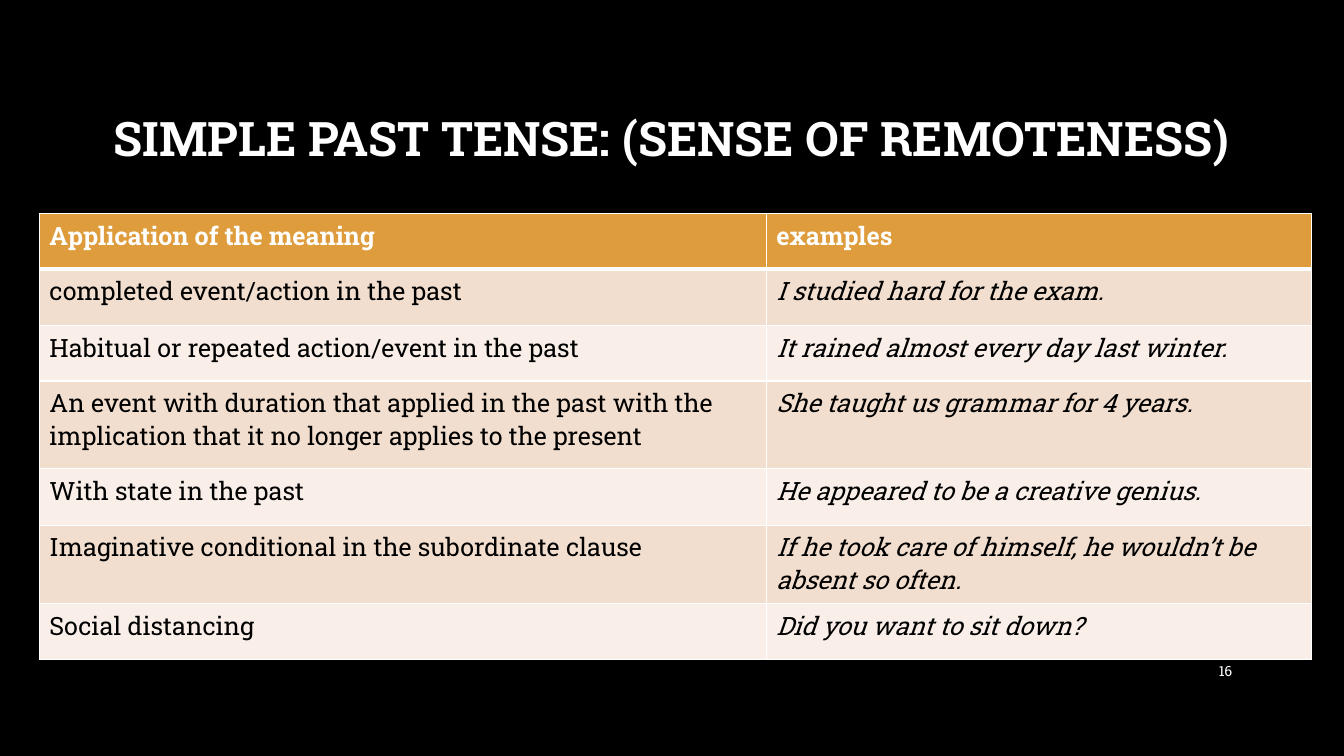
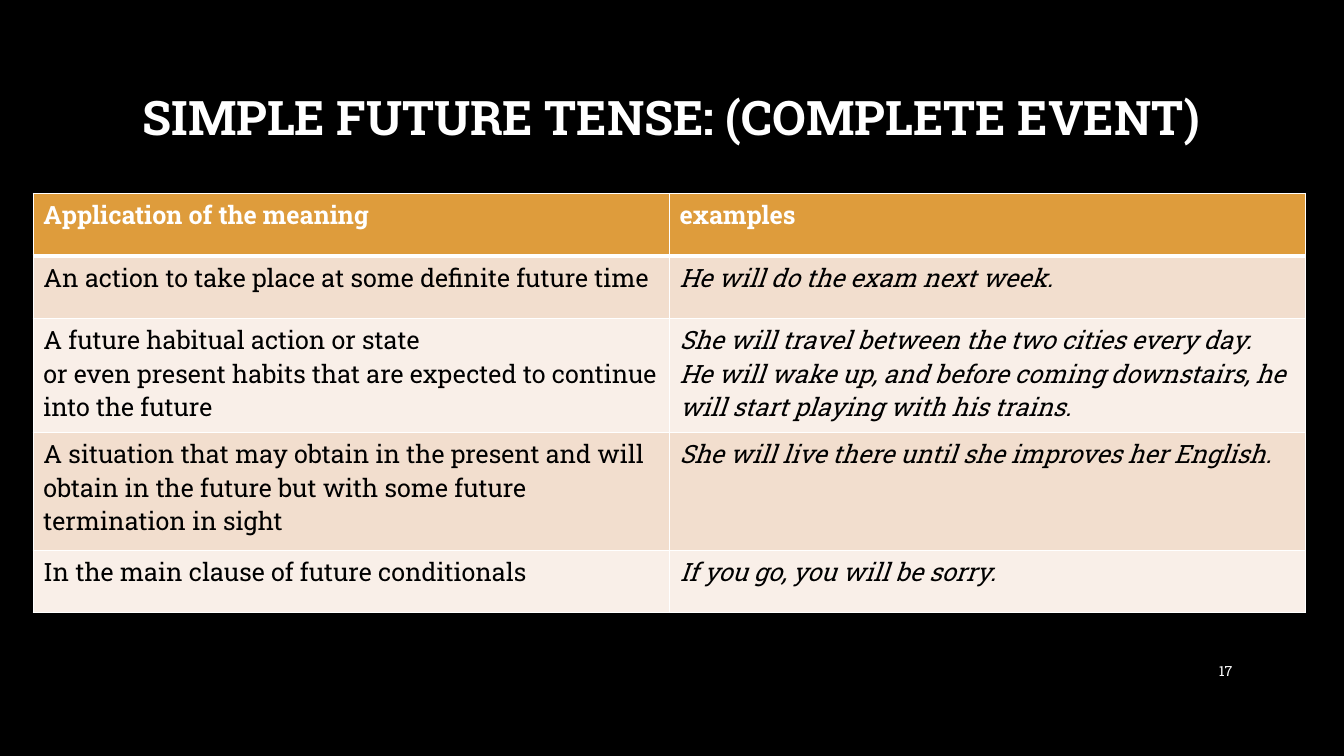
from dataclasses import dataclass

from lxml import etree
from pptx import Presentation
from pptx.dml.color import RGBColor
from pptx.enum.text import MSO_ANCHOR, MSO_AUTO_SIZE, PP_ALIGN
from pptx.oxml.ns import qn
from pptx.util import Pt

PX = 9144  # EMU per px, 100 px to the inch
SLIDE_WIDTH, SLIDE_HEIGHT = 1333 * PX, 750 * PX

BLACK = RGBColor(0x00, 0x00, 0x00)
WHITE = RGBColor(0xFF, 0xFF, 0xFF)
ORANGE = RGBColor(0xDE, 0x9C, 0x3C)
PEACH = RGBColor(0xF2, 0xDE, 0xCE)
CREAM = RGBColor(0xF9, 0xEF, 0xE8)

FONT = "Roboto Slab"
TITLE_SIZE, TABLE_SIZE, NUMBER_SIZE = 34, 18, 10
TITLE_HEIGHT = 145
THIN, THICK = 1, 3

CENTER, RIGHT = PP_ALIGN.CENTER, PP_ALIGN.RIGHT
MIDDLE = MSO_ANCHOR.MIDDLE
NO_AUTOFIT = MSO_AUTO_SIZE.NONE
TITLE_ONLY = 5

HEADINGS = ("Application of the meaning", "examples")


@dataclass(frozen=True)
class Usage:
    meaning: str
    example: str
    height: int


@dataclass(frozen=True)
class TenseSlide:
    title: str
    number: int
    title_top: int
    table_left: int
    columns: tuple[int, int]
    header_height: int
    usages: tuple[Usage, ...]


TENSES = (
    TenseSlide(
        "SIMPLE PAST TENSE: (SENSE OF REMOTENESS)", 16, 67, 39, (721, 541), 55,
        (
            Usage("completed event/action in the past",
                  "I studied hard for the exam.", 56),
            Usage("Habitual or repeated action/event in the past",
                  "It rained almost every day last winter.", 55),
            Usage("An event with duration that applied in the past with the "
                  "implication that it no longer applies to the present",
                  "She taught us grammar for 4 years.", 87),
            Usage("With state in the past",
                  "He appeared to be a creative genius.", 56),
            Usage("Imaginative conditional in the subordinate clause",
                  "If he took care of himself, he wouldn’t be absent so often.", 78),
            Usage("Social distancing", "Did you want to sit down?", 55),
        ),
    ),
    TenseSlide(
        "SIMPLE FUTURE TENSE: (COMPLETE EVENT)", 17, 47, 33, (631, 631), 62,
        (
            Usage("An action to take place at some definite future time",
                  "He will do the exam next week.", 62),
            Usage("A future habitual action or state\v"
                  "or even present habits that are expected to continue into the future",
                  "She will travel between the two cities every day.\v"
                  "He will wake up, and before coming downstairs, he will start "
                  "playing with his trains.", 113),
            Usage("A situation that may obtain in the present and will obtain in "
                  "the future but with some future termination in sight",
                  "She will live there until she improves her English.", 117),
            Usage("In the main clause of future conditionals",
                  "If you go, you will be sorry.", 62),
        ),
    ),
)


def place(shape, left: int, top: int, width: int, height: int) -> None:
    shape.left, shape.top = left * PX, top * PX
    shape.width, shape.height = width * PX, height * PX


def format_text(frame, size: int, color: RGBColor, bold: bool = False,
                italic: bool = False, align: PP_ALIGN | None = None) -> None:
    for paragraph in frame.paragraphs:
        paragraph.alignment = align
        for run in paragraph.runs:
            font = run.font
            font.name, font.size = FONT, Pt(size)
            font.bold, font.italic = bold, italic
            font.color.rgb = color


def set_borders(cell, top: int, bottom: int) -> None:
    """Draw white borders; must come before the cell's fill in the XML."""
    properties = cell._tc.get_or_add_tcPr()
    widths = {"a:lnL": THIN, "a:lnR": THIN, "a:lnT": top, "a:lnB": bottom}
    for tag, width in widths.items():
        line = etree.SubElement(properties, qn(tag), w=str(Pt(width)))
        fill = etree.SubElement(line, qn("a:solidFill"))
        etree.SubElement(fill, qn("a:srgbClr"), val=str(WHITE))


def add_title(slide, tense: TenseSlide) -> None:
    title = slide.shapes.title
    place(title, 100, tense.title_top, 1132, TITLE_HEIGHT)
    frame = title.text_frame
    frame.text = tense.title
    frame.word_wrap = True
    frame.auto_size = NO_AUTOFIT
    frame.vertical_anchor = MIDDLE
    format_text(frame, TITLE_SIZE, WHITE, bold=True, align=CENTER)
    frame.paragraphs[0].line_spacing = 0.9


def add_usage_table(slide, tense: TenseSlide) -> None:
    heights = [tense.header_height, *(usage.height for usage in tense.usages)]
    texts = [HEADINGS, *((usage.meaning, usage.example) for usage in tense.usages)]
    table = slide.shapes.add_table(
        len(texts), len(HEADINGS), tense.table_left * PX,
        (tense.title_top + TITLE_HEIGHT) * PX,
        sum(tense.columns) * PX, sum(heights) * PX,
    ).table
    for column, width in zip(table.columns, tense.columns):
        column.width = width * PX
    for index, (row, height, row_texts) in enumerate(zip(table.rows, heights, texts)):
        row.height = height * PX
        header = index == 0
        band = ORANGE if header else PEACH if index % 2 else CREAM
        for position, (cell, text) in enumerate(zip(row.cells, row_texts)):
            set_borders(cell, THICK if index == 1 else THIN, THICK if header else THIN)
            cell.fill.solid()
            cell.fill.fore_color.rgb = band
            cell.text_frame.text = text
            format_text(cell.text_frame, TABLE_SIZE, WHITE if header else BLACK,
                        bold=header, italic=not header and position == 1)


def add_slide_number(slide, number: int) -> None:
    box = slide.shapes.add_textbox(1150 * PX, 646 * PX, 82 * PX, 40 * PX)
    frame = box.text_frame
    frame.word_wrap = True
    frame.vertical_anchor = MIDDLE
    frame.text = str(number)
    format_text(frame, NUMBER_SIZE, WHITE, align=RIGHT)


def main() -> None:
    deck = Presentation()
    deck.slide_width, deck.slide_height = SLIDE_WIDTH, SLIDE_HEIGHT
    background = deck.slide_master.background.fill
    background.solid()
    background.fore_color.rgb = BLACK
    for tense in TENSES:
        slide = deck.slides.add_slide(deck.slide_layouts[TITLE_ONLY])
        add_title(slide, tense)
        add_usage_table(slide, tense)
        add_slide_number(slide, tense.number)
    deck.save("out.pptx")


if __name__ == "__main__":
    main()
